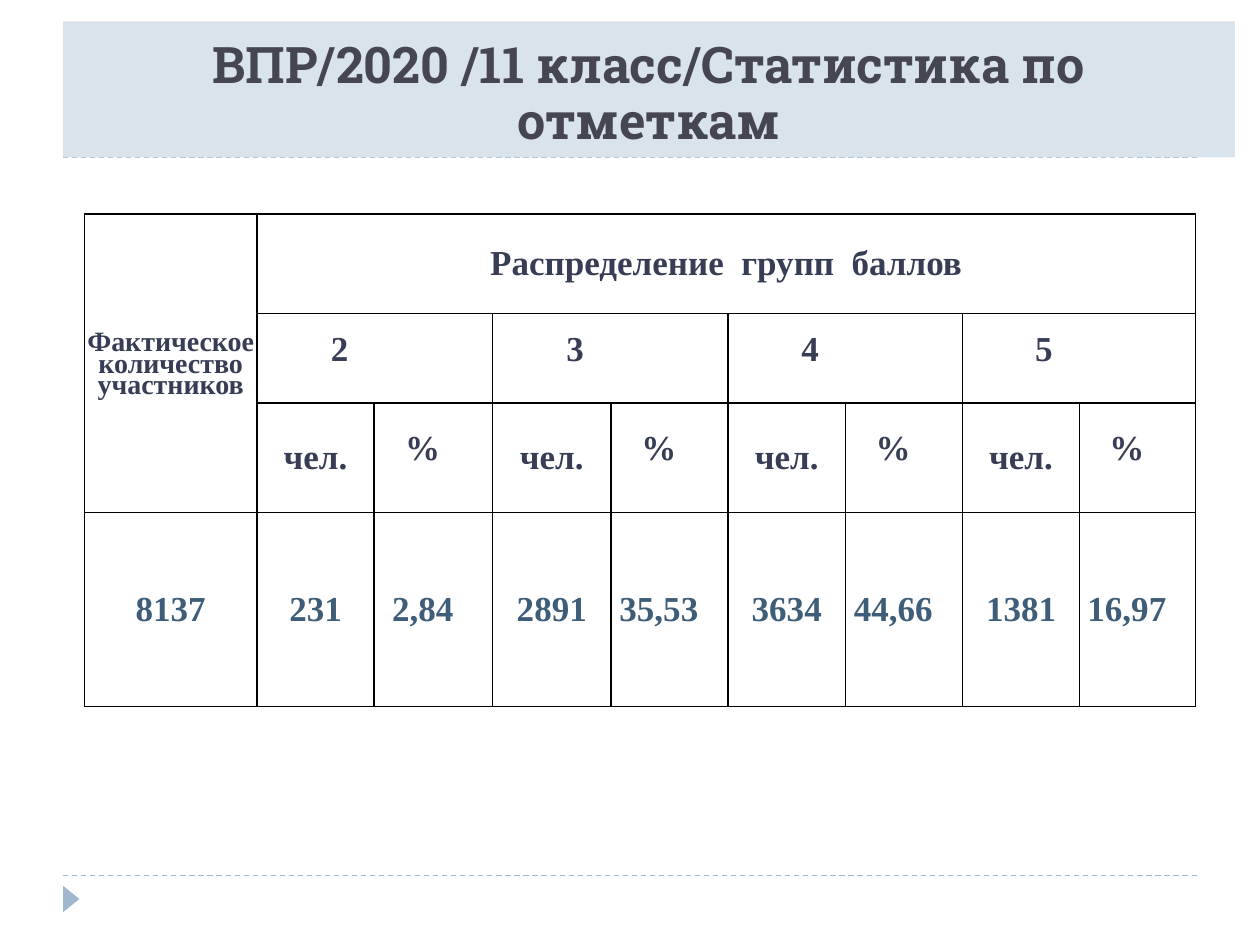
"""Build the slide with the table of marks for grade 11."""
from lxml import etree
from pptx import Presentation
from pptx.dml.color import RGBColor
from pptx.enum.dml import MSO_LINE
from pptx.enum.shapes import MSO_CONNECTOR, MSO_SHAPE
from pptx.enum.text import MSO_ANCHOR, MSO_AUTO_SIZE, PP_ALIGN
from pptx.oxml.ns import qn
from pptx.util import Inches, Pt

DASH = MSO_LINE.DASH
LINE = MSO_CONNECTOR.STRAIGHT
TRIANGLE = MSO_SHAPE.ISOSCELES_TRIANGLE
MIDDLE, BOTTOM = MSO_ANCHOR.MIDDLE, MSO_ANCHOR.BOTTOM
CENTER = PP_ALIGN.CENTER
FIXED = MSO_AUTO_SIZE.NONE

BLUE = RGBColor(0x9F, 0xB8, 0xCD)
PALE = RGBColor(0xD9, 0xE3, 0xEB)
GRAY = RGBColor(0x46, 0x46, 0x53)
NAVY = RGBColor(0x37, 0x3D, 0x54)
STEEL = RGBColor(0x3E, 0x5D, 0x78)


def add_text(para, text, size, color, font="Times New Roman"):
    para.alignment = CENTER
    run = para.add_run()
    run.text = text
    run.font.size = Pt(size)
    run.font.name = font
    run.font.bold = True
    run.font.color.rgb = color


def set_cell(cell, lines, size=20, color=NAVY, right=0):
    cell.vertical_anchor = MIDDLE
    cell.margin_left = cell.margin_top = cell.margin_bottom = 0
    cell.margin_right = Inches(right)
    frame = cell.text_frame
    for i, (text, space) in enumerate(lines):
        para = frame.add_paragraph() if i else frame.paragraphs[0]
        if space:
            para.line_spacing = Pt(space)
        add_text(para, text, size, color)


deck = Presentation()
deck.slide_width, deck.slide_height = Inches(10), Inches(7.5)
slide = deck.slides.add_slide(deck.slide_layouts[5])
shapes = slide.shapes

for y in (6.95, 1.25):
    rule = shapes.add_connector(LINE, Inches(0.5), Inches(y), Inches(9.5), Inches(y))
    rule.line.color.rgb = BLUE
    rule.line.width = Pt(0.75)
    rule.line.dash_style = DASH
    etree.SubElement(rule._element.spPr, qn("a:effectLst"))

mark = shapes.add_shape(TRIANGLE, Inches(0.46), Inches(7.07), Inches(0.21), Inches(0.13))
mark.rotation = 90
mark.shadow.inherit = False
mark.fill.solid()
mark.fill.fore_color.rgb = BLUE
mark.line.fill.background()

widths = [1.37, 0.93, 0.94, 0.94, 0.93, 0.93, 0.93, 0.93, 0.92]
heights = [0.79, 0.71, 0.87, 1.54]
table = shapes.add_table(
    len(heights), len(widths), Inches(0.67), Inches(1.7), Inches(8.82), Inches(3.9)
).table
table.first_row = table.horz_banding = False
for col, width in zip(table.columns, widths):
    col.width = Inches(width)
for row, height in zip(table.rows, heights):
    row.height = Inches(height)

for cell in table.iter_cells():
    props = cell._tc.get_or_add_tcPr()
    for side in ("a:lnL", "a:lnR", "a:lnT", "a:lnB"):
        edge = etree.SubElement(props, qn(side), w=str(Pt(1)))
        fill = etree.SubElement(edge, qn("a:solidFill"))
        etree.SubElement(fill, qn("a:srgbClr"), val="000000")
    cell.fill.background()

table.cell(0, 0).merge(table.cell(2, 0))
table.cell(0, 1).merge(table.cell(0, 8))
people = [("Фактическое", None), ("количество", 12.3), ("участников", 12)]
set_cell(table.cell(0, 0), people, size=16)
set_cell(table.cell(0, 1), [("Распределение  групп  баллов", None)])
set_cell(table.cell(3, 0), [("8137", None)], color=STEEL)

grades = [
    ("2", "231", "2,84"),
    ("3", "2891", "35,53"),
    ("4", "3634", "44,66"),
    ("5", "1381", "16,97"),
]
for i, (grade, count, share) in enumerate(grades):
    col = 1 + 2 * i
    table.cell(1, col).merge(table.cell(1, col + 1))
    set_cell(table.cell(1, col), [(grade, 12)], right=0.56)
    set_cell(table.cell(2, col), [("чел.", None)])
    set_cell(table.cell(2, col + 1), [("%", 12)], right=0.17)
    set_cell(table.cell(3, col), [(count, None)], color=STEEL)
    set_cell(table.cell(3, col + 1), [(share, None)], color=STEEL, right=0.17)

title = shapes.title
shapes._spTree.append(title._element)
title.left, title.top = Inches(0.5), Inches(0.17)
title.width, title.height = Inches(9.3), Inches(1.08)
title.fill.solid()
title.fill.fore_color.rgb = PALE
frame = title.text_frame
frame.word_wrap = True
frame.auto_size = FIXED
frame.vertical_anchor = BOTTOM
head = frame.paragraphs[0]
head.line_spacing = 0.93
add_text(head, "ВПР/2020 /11 класс/Статистика по отметкам", 28.8, GRAY, "Roboto Slab")

deck.save("out.pptx")
